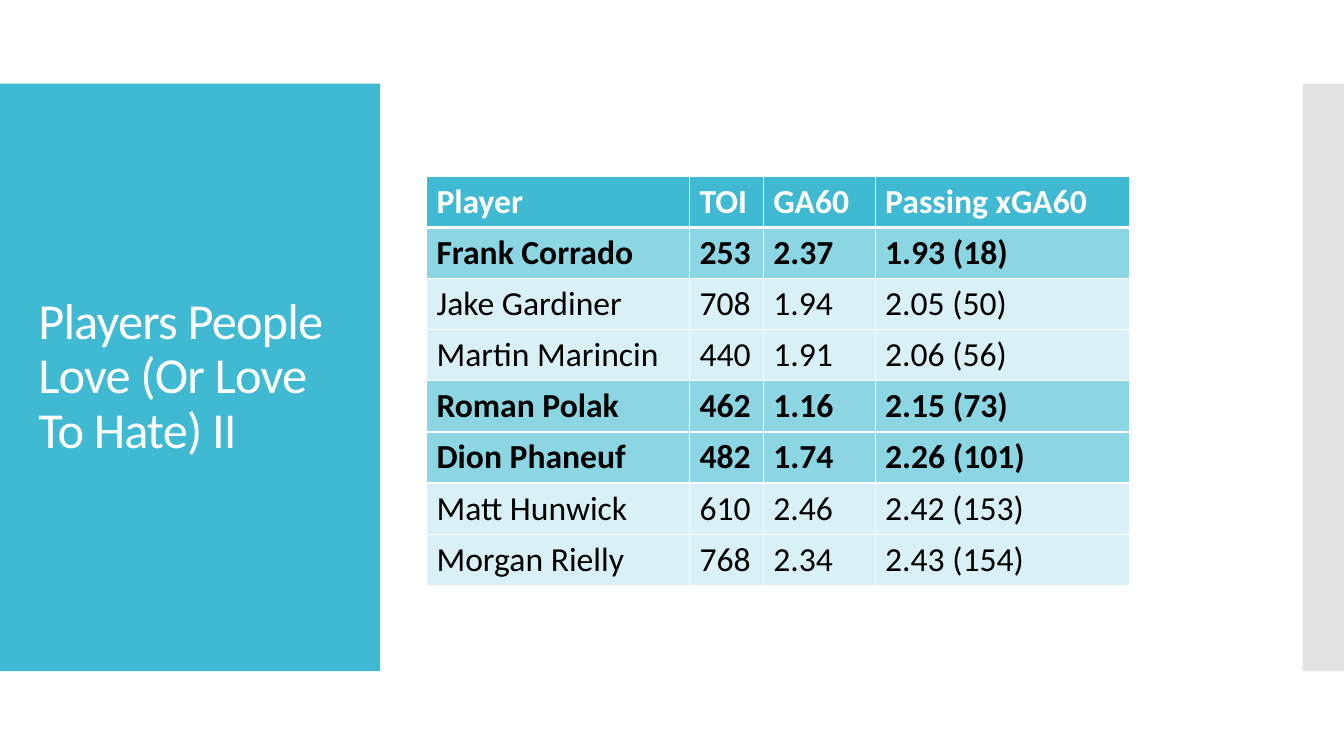
from lxml import etree
from pptx import Presentation
from pptx.dml.color import RGBColor
from pptx.enum.shapes import MSO_SHAPE as SHAPE
from pptx.enum.text import MSO_ANCHOR as ANCHOR, MSO_AUTO_SIZE as AUTO, PP_ALIGN as ALIGN
from pptx.oxml.ns import qn
from pptx.util import Inches, Pt

TEAL = RGBColor(0x40, 0xBA, 0xD2)
MID_TEAL = RGBColor(0x8C, 0xD6, 0xE4)
PALE_TEAL = RGBColor(0xD9, 0xF1, 0xF6)
GREY = RGBColor(0xC8, 0xC8, 0xC8)
WHITE = RGBColor(0xFF, 0xFF, 0xFF)
BLACK = RGBColor(0, 0, 0)
FONT = "Calibri"

HEADER = ("Player", "TOI", "GA60", "Passing xGA60")
PLAYERS = [
    ("Frank Corrado", "253", "2.37", "1.93 (18)"),
    ("Jake Gardiner", "708", "1.94", "2.05 (50)"),
    ("Martin Marincin", "440", "1.91", "2.06 (56)"),
    ("Roman Polak", "462", "1.16", "2.15 (73)"),
    ("Dion Phaneuf", "482", "1.74", "2.26 (101)"),
    ("Matt Hunwick", "610", "2.46", "2.42 (153)"),
    ("Morgan Rielly", "768", "2.34", "2.43 (154)"),
]
HIGHLIGHTED = {"Frank Corrado", "Roman Polak", "Dion Phaneuf"}
COL_WIDTHS = (2.61, 0.73, 1.11, 2.52)
ROW_HEIGHT = 0.5


def add_run(p, text, size, color, bold=False):
    r = p.add_run()
    r.text = text
    r.font.name = FONT
    r.font.size = Pt(size)
    r.font.bold = bold
    r.font.color.rgb = color
    return r


def add_band(s, x, y, w, h, color):
    sp = s.shapes.add_shape(SHAPE.RECTANGLE, Inches(x), Inches(y), Inches(w), Inches(h))
    sp.shadow.inherit = False
    sp.fill.solid()
    sp.fill.fore_color.rgb = color
    sp.line.fill.background()
    return sp


def add_title_panel(s, x, y, w, h):
    panel = add_band(s, x, y, w, h, TEAL)
    title = s.shapes.title
    title.element.addprevious(panel.element)  # keeps the title in front
    title.left, title.top = Inches(x + 0.28), Inches(y + 0.4)
    title.width, title.height = Inches(w - 0.55), Inches(h - 0.8)
    tf = title.text_frame
    tf.word_wrap = True
    tf.auto_size = AUTO.NONE
    tf.vertical_anchor = ANCHOR.MIDDLE
    p = tf.paragraphs[0]
    p.alignment = ALIGN.LEFT
    p.line_spacing = 0.9
    r = add_run(p, "Players People Love (Or Love To Hate) II", 36, WHITE)
    r.font._element.set("spc", "-60")


def add_edge_band(s, x, y, w, h):
    band = add_band(s, x, y, w, h, GREY)
    color = band.element.spPr.find(qn("a:solidFill"))[0]
    etree.SubElement(color, qn("a:alpha"), val="50000")


def set_borders(cell, top, bottom):
    """Draw white cell borders; top and bottom are widths in points."""
    tcPr = cell._tc.get_or_add_tcPr()
    for side, width in (("L", 1), ("R", 1), ("T", top), ("B", bottom)):
        ln = etree.SubElement(tcPr, qn(f"a:ln{side}"), w=str(Pt(width)))
        fill = etree.SubElement(ln, qn("a:solidFill"))
        etree.SubElement(fill, qn("a:srgbClr"), val=str(WHITE))


def add_player_table(s, x, y):
    rows = [HEADER, *PLAYERS]
    table = s.shapes.add_table(
        len(rows), len(HEADER), Inches(x), Inches(y),
        Inches(sum(COL_WIDTHS)), Inches(ROW_HEIGHT * len(rows))).table
    for column, width in zip(table.columns, COL_WIDTHS):
        column.width = Inches(width)
    for i, row in enumerate(rows):
        bold = i == 0 or row[0] in HIGHLIGHTED
        fill = TEAL if i == 0 else MID_TEAL if bold else PALE_TEAL
        for j, text in enumerate(row):
            cell = table.cell(i, j)
            set_borders(cell, top=3 if i == 1 else 1, bottom=3 if i == 0 else 1)
            cell.fill.solid()
            cell.fill.fore_color.rgb = fill
            add_run(cell.text_frame.paragraphs[0], text, 24,
                    WHITE if i == 0 else BLACK, bold)


def main():
    prs = Presentation()
    prs.slide_width, prs.slide_height = Inches(13.33), Inches(7.5)
    s = prs.slides.add_slide(prs.slide_layouts[5])
    add_title_panel(s, 0, 0.83, 3.77, 5.83)
    add_edge_band(s, 12.92, 0.83, 0.41, 5.83)
    add_player_table(s, 4.23, 1.75)
    prs.save("out.pptx")


if __name__ == "__main__":
    main()
